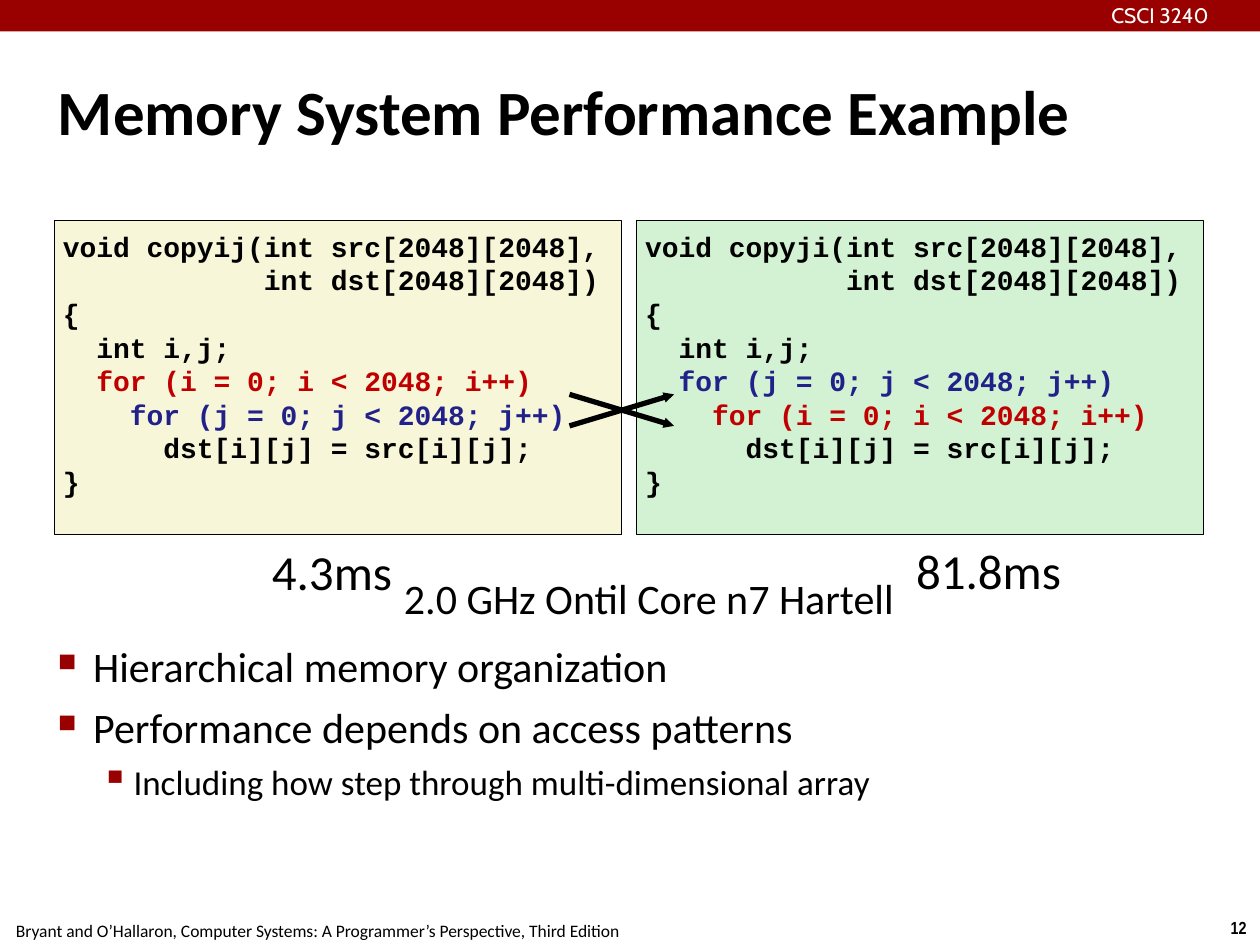
from lxml import etree
from pptx import Presentation
from pptx.dml.color import RGBColor
from pptx.enum.shapes import MSO_CONNECTOR, MSO_SHAPE
from pptx.enum.text import MSO_ANCHOR, MSO_AUTO_SIZE, PP_ALIGN
from pptx.oxml.ns import qn
from pptx.util import Inches, Pt

BLACK = RGBColor(0x00, 0x00, 0x00)
WHITE = RGBColor(0xFF, 0xFF, 0xFF)
DARK_RED = RGBColor(0x99, 0x00, 0x00)
LOOP_I_RED = RGBColor(0xC0, 0x00, 0x00)
LOOP_J_BLUE = RGBColor(0x21, 0x21, 0x8A)
CREAM = RGBColor(0xF8, 0xF6, 0xD9)
GREEN = RGBColor(0xD3, 0xF2, 0xD3)


def format_text(paragraph, size, font="Calibri", color=BLACK, bold=False):
    for run in paragraph.runs:
        run.font.size = Pt(size)
        run.font.name = font
        run.font.color.rgb = color
        run.font.bold = bold


def set_margins(text_frame, horizontal, vertical):
    text_frame.margin_left = text_frame.margin_right = Inches(horizontal)
    text_frame.margin_top = text_frame.margin_bottom = Inches(vertical)


presentation = Presentation()
presentation.slide_width = Inches(10)
presentation.slide_height = Inches(7.5)
slide = presentation.slides.add_slide(presentation.slide_layouts[5])
shapes = slide.shapes

banner = shapes.add_shape(MSO_SHAPE.RECTANGLE, 0, 0, Inches(10), Inches(0.25))
banner.shadow.inherit = False
banner.fill.solid()
banner.fill.fore_color.rgb = DARK_RED
banner.line.fill.background()

title = shapes.title
title.left, title.top = Inches(0.42), Inches(0.28)
title.width, title.height = Inches(9.17), Inches(1.19)
title.text_frame.text = "Memory System Performance Example"
title.text_frame.auto_size = MSO_AUTO_SIZE.NONE
title.text_frame.vertical_anchor = MSO_ANCHOR.MIDDLE
set_margins(title.text_frame, 0.04, 0.04)
title.text_frame.paragraphs[0].alignment = PP_ALIGN.LEFT
format_text(title.text_frame.paragraphs[0], 36, bold=True)

labels = [
    ("12", 9.66, 7.23, 0.34, 0.27, 10, "Arial Narrow", BLACK, True, 0.1, 0.05),
    ("Bryant and O’Hallaron, Computer Systems: A Programmer’s Perspective, Third Edition",
     -0.02, 7.25, 5.08, 0.27, 10, "Calibri", BLACK, False, 0.1, 0.05),
    ("CSCI 3240", 8.82, 0.02, 1.44, 0.19, 12, "Cabin", WHITE, False, 0, 0),
    ("81.8ms", 7.22, 4.25, 1.25, 0.56, 28, "Calibri", BLACK, False, 0.04, 0.04),
    ("4.3ms", 2.05, 4.25, 1.17, 0.57, 28, "Calibri", BLACK, False, 0.1, 0.05),
    ("2.0 GHz Ontil Core n7 Hartell", 3.14, 4.5, 4.02, 0.49, 24, "Calibri", BLACK, False, 0.04, 0.04),
]
for text, left, top, width, height, size, font, color, bold, horizontal, vertical in labels:
    label = shapes.add_textbox(Inches(left), Inches(top), Inches(width), Inches(height))
    label.text_frame.text = text
    set_margins(label.text_frame, horizontal, vertical)
    paragraph = label.text_frame.paragraphs[0]
    if text == "CSCI 3240":
        label.text_frame.word_wrap = True
        paragraph.alignment = PP_ALIGN.LEFT
    else:
        label.text_frame.word_wrap = False
        label.text_frame.auto_size = MSO_AUTO_SIZE.SHAPE_TO_FIT_TEXT
        paragraph.alignment = PP_ALIGN.CENTER
    format_text(paragraph, size, font, color, bold)

for name, outer, inner, left, fill in [("copyji", "j", "i", 5.05, GREEN),
                                       ("copyij", "i", "j", 0.43, CREAM)]:
    code_box = shapes.add_shape(MSO_SHAPE.RECTANGLE, Inches(left), Inches(1.75),
                                Inches(4.5), Inches(2.49))
    code_box.shadow.inherit = False
    code_box.fill.solid()
    code_box.fill.fore_color.rgb = fill
    code_box.line.color.rgb = BLACK
    code_box.line.width = Pt(0.5)
    set_margins(code_box.text_frame, 0.07, 0.07)
    code_box.text_frame.vertical_anchor = MSO_ANCHOR.TOP
    code_box.text_frame.text = "\n".join([
        f"void {name}(int src[2048][2048],",
        "            int dst[2048][2048])",
        "{",
        "  int i,j;",
        f"  for ({outer} = 0; {outer} < 2048; {outer}++)",
        f"    for ({inner} = 0; {inner} < 2048; {inner}++)",
        "      dst[i][j] = src[i][j];",
        "}",
    ])
    for paragraph in code_box.text_frame.paragraphs:
        paragraph.alignment = PP_ALIGN.LEFT
        color = BLACK
        if "for (i" in paragraph.text:
            color = LOOP_I_RED
        elif "for (j" in paragraph.text:
            color = LOOP_J_BLUE
        format_text(paragraph, 16, "Courier New", color, True)

for start_y, end_y in [(3.13, 3.38), (3.38, 3.13)]:
    arrow = shapes.add_connector(MSO_CONNECTOR.STRAIGHT, Inches(4.52), Inches(start_y),
                                 Inches(5.35), Inches(end_y))
    arrow.line.color.rgb = BLACK
    arrow.line.width = Pt(3)
    etree.SubElement(arrow.line._get_or_add_ln(), qn("a:tailEnd"),
                     type="triangle", w="sm", len="sm")
    etree.SubElement(arrow._element.spPr, qn("a:effectLst"))

bullets = [
    ("Hierarchical memory organization", 0, 24, 6, 0.28, -0.28, "■", 60),
    ("Performance depends on access patterns", 0, 24, 6, 0.28, -0.28, "■", 60),
    ("Including how step through multi-dimensional array", 1, 20, 5, 0.6, -0.26, "▪", 110),
]
body = shapes.add_textbox(Inches(0.42), Inches(5.04), Inches(9.17), Inches(2.43))
body.text_frame.word_wrap = True
set_margins(body.text_frame, 0.04, 0.04)
body.text_frame.text = "\n".join(bullet[0] for bullet in bullets)
for paragraph, bullet in zip(body.text_frame.paragraphs, bullets):
    text, level, size, space_before, margin, indent, symbol, percent = bullet
    paragraph.level = level
    paragraph.space_before = Pt(space_before)
    format_text(paragraph, size)
    properties = paragraph._p.get_or_add_pPr()
    properties.set("marL", str(Inches(margin)))
    properties.set("indent", str(Inches(indent)))
    bullet_color = etree.SubElement(properties, qn("a:buClr"))
    etree.SubElement(bullet_color, qn("a:srgbClr"), val=str(DARK_RED))
    etree.SubElement(properties, qn("a:buSzPct"), val=str(percent * 1000))
    etree.SubElement(properties, qn("a:buChar"), char=symbol)

presentation.save("out.pptx")
